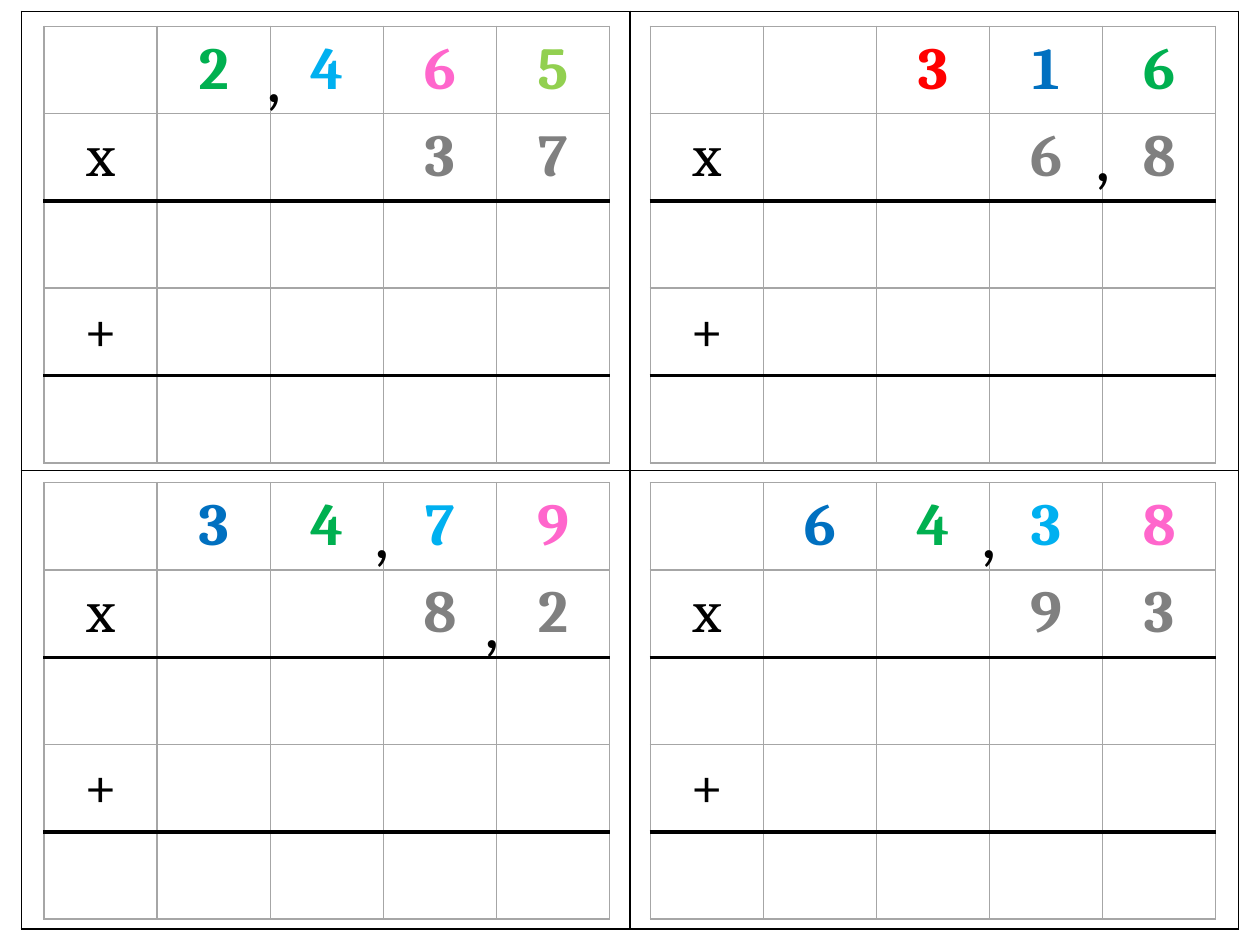
"""Build a worksheet slide with four column multiplications on squared grids."""
import pptx
import pptx.dml.color
import pptx.enum.text
import pptx.oxml
import pptx.oxml.ns
import pptx.util

Cm = pptx.util.Cm

THEME = {
    "black": "000000", "white": "FFFFFF", "grid": "A6A6A6", "gray": "808080",
    "green": "00B050", "sky": "00B0F0", "pink": "FF66CC", "lime": "92D050",
    "red": "FF0000", "blue": "0070C0",
    "digit_font": "Cambria", "digit_size": 34,
    "comma_font": "Calibri", "comma_size": 40,
    "thin": 1, "thick": 2.25,
}

PROBLEMS = [
    {"top": "2465", "colors": ["green", "sky", "pink", "lime"], "bottom": "37",
     "commas": [(4.22, 0)]},
    {"top": "316", "colors": ["red", "blue", "green"], "bottom": "68",
     "commas": [(8.71, 1.6)]},
    {"top": "3479", "colors": ["blue", "green", "sky", "pink"], "bottom": "82",
     "commas": [(6.4, 0), (8.61, 1.8)]},
    {"top": "6438", "colors": ["blue", "green", "sky", "pink"], "bottom": "93",
     "commas": [(6.4, 0)]},
]

FRAME = {"left": 0.43, "top": 0.23, "rows": 2, "columns": 2, "row_height": 9.25, "column_width": 12.27}
GRID = {"rows": 5, "columns": 5, "row_height": 1.76, "column_width": 2.28}
GRID_LEFTS = (0.89, 13.11)
GRID_TOPS = (0.53, 9.73)
RULED_ROWS = (1, 3)
COMMA_SIZE = (0.79, 1.96)


def write_text(text_frame, text, font, size, color="black", bold=False, alignment=None):
    paragraph = text_frame.paragraphs[0]
    paragraph.alignment = alignment
    run = paragraph.add_run()
    run.text = text
    run.font.name = font
    run.font.size = pptx.util.Pt(size)
    run.font.bold = bold
    run.font.color.rgb = pptx.dml.color.RGBColor.from_string(THEME[color])


def set_border(cell, side, color, width):
    properties = cell._tc.get_or_add_tcPr()
    properties.append(pptx.oxml.parse_xml(
        f'<a:ln{side} {pptx.oxml.ns.nsdecls("a")} w="{pptx.util.Pt(width)}">'
        f'<a:solidFill><a:srgbClr val="{THEME[color]}"/></a:solidFill></a:ln{side}>'))


def add_grid(slide, left, top, rows, columns, row_height, column_width, color, ruled_rows=()):
    table = slide.shapes.add_table(
        rows, columns, Cm(left), Cm(top), Cm(columns * column_width), Cm(rows * row_height)).table
    table.first_row = table.horz_banding = False
    for column in table.columns:
        column.width = Cm(column_width)
    for row_index, row in enumerate(table.rows):
        row.height = Cm(row_height)
        ruled = {"T": row_index - 1 in ruled_rows, "B": row_index in ruled_rows}
        for cell in row.cells:
            for side in "LRTB":
                if ruled.get(side):
                    set_border(cell, side, "black", THEME["thick"])
                else:
                    set_border(cell, side, color, THEME["thin"])
            cell.fill.solid()
            cell.fill.fore_color.rgb = pptx.dml.color.RGBColor.from_string(THEME["white"])
            cell.vertical_anchor = pptx.enum.text.MSO_ANCHOR.MIDDLE
            cell.margin_top = cell.margin_bottom = 0
    return table


def write_cell(table, row, column, text, color="black", bold=False):
    write_text(table.cell(row, column).text_frame, text, THEME["digit_font"], THEME["digit_size"],
               color=color, bold=bold, alignment=pptx.enum.text.PP_ALIGN.CENTER)


def write_number(table, row, digits, colors):
    first_column = GRID["columns"] - len(digits)
    for column, (digit, color) in enumerate(zip(digits, colors), first_column):
        write_cell(table, row, column, digit, color=color, bold=True)


def add_problem(slide, problem, left, top):
    table = add_grid(slide, left, top, **GRID, color="grid", ruled_rows=RULED_ROWS)
    write_number(table, 0, problem["top"], problem["colors"])
    write_number(table, 1, problem["bottom"], ["gray"] * len(problem["bottom"]))
    write_cell(table, 1, 0, "x")
    write_cell(table, 3, 0, "+")


def add_comma(slide, left, top):
    width, height = COMMA_SIZE
    text_frame = slide.shapes.add_textbox(Cm(left), Cm(top), Cm(width), Cm(height)).text_frame
    text_frame.word_wrap = False
    text_frame.auto_size = pptx.enum.text.MSO_AUTO_SIZE.SHAPE_TO_FIT_TEXT
    write_text(text_frame, ",", THEME["comma_font"], THEME["comma_size"])


def main():
    presentation = pptx.Presentation()
    presentation.slide_width, presentation.slide_height = Cm(25.4), Cm(19.05)
    slide = presentation.slides.add_slide(presentation.slide_layouts[6])
    add_grid(slide, **FRAME, color="black")
    origins = [(left, top) for top in GRID_TOPS for left in GRID_LEFTS]
    for problem, (left, top) in zip(PROBLEMS, origins):
        add_problem(slide, problem, left, top)
    for problem, (left, top) in zip(PROBLEMS, origins):
        for offset_x, offset_y in problem["commas"]:
            add_comma(slide, left + offset_x, top + offset_y)
    presentation.save("out.pptx")


if __name__ == "__main__":
    main()
